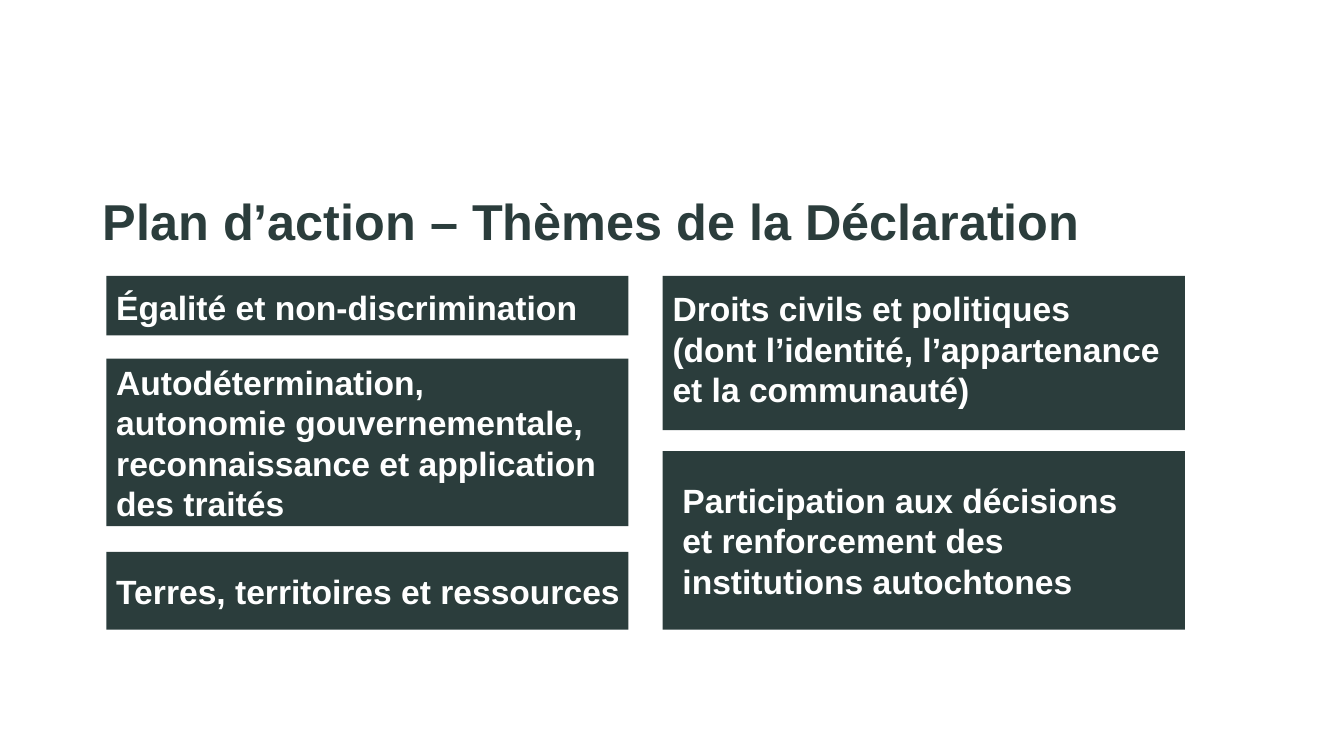
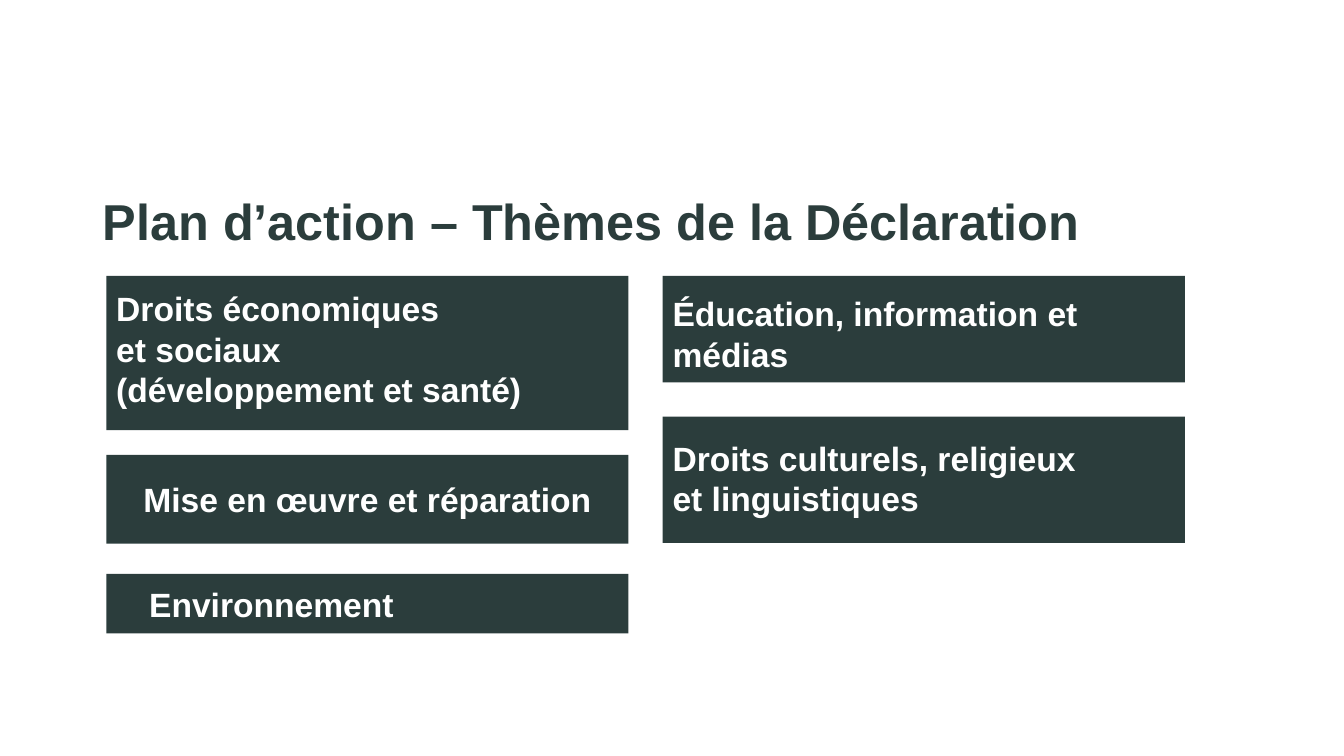
from pptx import Presentation
from pptx.dml.color import RGBColor
from pptx.enum.shapes import MSO_SHAPE
from pptx.enum.text import MSO_ANCHOR, PP_ALIGN
from pptx.util import Cm, Pt

RECT = MSO_SHAPE.RECTANGLE
MIDDLE = MSO_ANCHOR.MIDDLE
LEFT, CENTER = PP_ALIGN.LEFT, PP_ALIGN.CENTER

COLORS = {"dark": "2B3D3C", "white": "FFFFFF"}
FONT = "Arial"
TITLE = "Plan d’action – Thèmes de la Déclaration"
TITLE_BOX = (2.34, 4.47, 29.21, 2.36)
COLUMN_LEFTS = (2.68, 16.7)
COLUMN_WIDTH = 13.16
INSET = 0.25

# Each theme: text, top and height in cm, then options for theme_box.
SLIDES = [
    (
        [
            ("Égalité et non-discrimination", 6.95, 1.5, {"shift": 0.05}),
            ("Autodétermination,\vautonomie gouvernementale, reconnaissance "
             "et application des traités", 9.04, 4.22, {}),
            ("Terres, territoires et ressources", 13.91, 1.96, {}),
        ],
        [
            ("Droits civils et politiques\v(dont l’identité, l’appartenance\v"
             "et la communauté)", 6.95, 3.89, {"shift": -0.11}),
            ("Participation aux décisions\vet renforcement des\v"
             "institutions autochtones", 11.37, 4.5, {"indent": 0.25}),
        ],
    ),
    (
        [
            ("Droits économiques\vet sociaux\v(développement et santé)",
             6.95, 3.89, {"shift": -0.11}),
            ("Mise en œuvre et réparation", 11.46, 2.24, {"align": CENTER}),
            ("Environnement", 14.46, 1.5, {"indent": 0.83}),
        ],
        [
            ("Éducation, information et médias", 6.95, 2.69, {"shift": 0.11}),
            ("Droits culturels, religieux\vet linguistiques",
             10.5, 3.18, {"shift": -0.04}),
        ],
    ),
]


def style(p, size, color, align=LEFT):
    p.alignment = align
    for r in p.runs:
        r.font.name = FONT
        r.font.size = Pt(size)
        r.font.bold = True
        r.font.color.rgb = RGBColor.from_string(COLORS[color])


def add_title(s):
    sp = s.shapes.title
    sp.left, sp.top, sp.width, sp.height = map(Cm, TITLE_BOX)
    tf = sp.text_frame
    tf.text = TITLE
    tf.vertical_anchor = MIDDLE
    p = tf.paragraphs[0]
    p.line_spacing = 0.9
    style(p, 36, "dark")


def theme_box(s, box, text, indent=0, shift=0, align=LEFT):
    """Add a filled box; shift moves its text down (or up, if negative)."""
    sp = s.shapes.add_shape(RECT, *map(Cm, box))
    sp.shadow.inherit = False
    sp.fill.solid()
    sp.fill.fore_color.rgb = RGBColor.from_string(COLORS["dark"])
    sp.line.fill.background()
    tf = sp.text_frame
    tf.word_wrap = True
    tf.vertical_anchor = MIDDLE
    tf.margin_left = Cm(INSET + indent)
    tf.margin_right = Cm(INSET if align == CENTER else 0)
    tf.margin_top = Cm(max(0, 2 * shift))
    tf.margin_bottom = Cm(max(0, -2 * shift))
    tf.text = text
    style(tf.paragraphs[0], 24, "white", align)


def themes_slide(prs, columns):
    s = prs.slides.add_slide(prs.slide_layouts[5])
    add_title(s)
    for left, themes in zip(COLUMN_LEFTS, columns):
        for text, top, height, options in themes:
            theme_box(s, (left, top, COLUMN_WIDTH, height), text, **options)


def main():
    prs = Presentation()
    prs.slide_width, prs.slide_height = Cm(33.87), Cm(19.05)
    for columns in SLIDES:
        themes_slide(prs, columns)
    prs.save("out.pptx")


if __name__ == "__main__":
    main()
